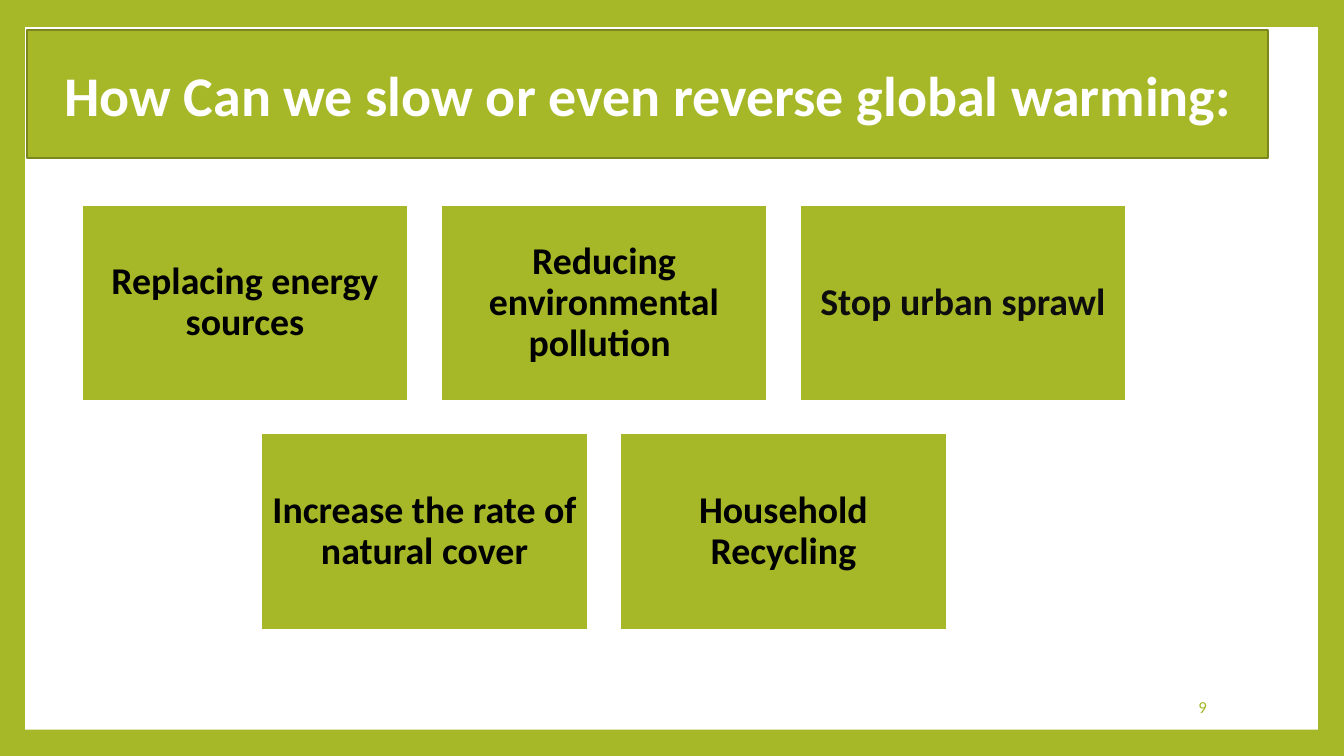
from lxml.etree import SubElement
from pptx import Presentation
from pptx.dml.color import RGBColor
from pptx.enum.shapes import MSO_SHAPE
from pptx.enum.text import MSO_ANCHOR, MSO_AUTO_SIZE, PP_ALIGN
from pptx.oxml.ns import qn
from pptx.util import Inches, Pt

GREEN, DARK_GREEN, WHITE, BLACK = "A6B727", "7B871D", "FFFFFF", "000000"

# Card grid: left and top of the first card, card size, column and row pitch
GRID_LEFT, GRID_TOP = 0.81, 2.03
CARD_W, CARD_H = 3.24, 1.95
COL, ROW = 3.56, 2.27

# Each row: starting column, then the cards with their text colours
CARD_ROWS = [
    (0, [("Replacing energy sources", BLACK),
         ("Reducing environmental pollution ", BLACK),
         ("Stop urban sprawl", "0D0D0D")]),
    (0.5, [("Increase the rate of natural cover", BLACK),
           ("Household Recycling", BLACK)]),
]


def color(hex_code):
    return RGBColor.from_string(hex_code)


def paint(sp, fill, line=None):
    sp.fill.solid()
    sp.fill.fore_color.rgb = color(fill)
    if line:
        sp.line.color.rgb = color(line)
        sp.line.width = Pt(1.5)
    else:
        sp.line.fill.background()


def write(sp, text, size, hex_code, bold=False, align=PP_ALIGN.CENTER):
    tf = sp.text_frame
    tf.word_wrap = True
    tf.auto_size = MSO_AUTO_SIZE.NONE
    tf.vertical_anchor = MSO_ANCHOR.MIDDLE
    p = tf.paragraphs[0]
    p.alignment = align
    r = p.add_run()
    r.text = text
    r.font.name, r.font.size, r.font.bold = "Calibri", Pt(size), bold
    r.font.color.rgb = color(hex_code)
    return p


def add_box(s, left, top, width, height, fill, line=None):
    sp = s.shapes.add_shape(MSO_SHAPE.RECTANGLE, Inches(left), Inches(top),
                            Inches(width), Inches(height))
    sp.shadow.inherit = False
    paint(sp, fill, line)
    return sp


def add_card(s, col, row, text, hex_code):
    sp = add_box(s, GRID_LEFT + col * COL, GRID_TOP + row * ROW,
                 CARD_W, CARD_H, GREEN, WHITE)
    p = write(sp, text, 27, hex_code, bold=True)
    p.line_spacing = 0.9


def format_title(s, text):
    title = s.shapes.title
    title.left, title.top = Inches(0.27), Inches(0.3)
    title.width, title.height = Inches(12.31), Inches(1.27)
    # Rounded banner outline for the placeholder
    geom = SubElement(title.element.spPr, qn("a:prstGeom"), prst="roundRect")
    SubElement(geom, qn("a:avLst"))
    paint(title, GREEN, DARK_GREEN)
    write(title, text, 40, WHITE, bold=True)
    return title


def add_page_number(s, number):
    sp = s.shapes.add_textbox(Inches(10.2), Inches(6.81),
                              Inches(1.87), Inches(0.4))
    write(sp, number, 12, GREEN, align=PP_ALIGN.RIGHT)


def main():
    prs = Presentation()
    prs.slide_width, prs.slide_height = Inches(13.33), Inches(7.5)
    s = prs.slides.add_slide(prs.slide_layouts[5])

    # Green frame around a white panel, with the title banner above it
    s.background.fill.solid()
    s.background.fill.fore_color.rgb = color(GREEN)
    panel = add_box(s, 0.25, 0.27, 12.82, 6.97, WHITE)
    title = format_title(s, "How Can we slow or even reverse global warming:")
    title.element.addprevious(panel.element)

    # Cards
    for row, (start, cards) in enumerate(CARD_ROWS):
        for i, (text, hex_code) in enumerate(cards):
            add_card(s, start + i, row, text, hex_code)

    add_page_number(s, "9")
    prs.save("out.pptx")


if __name__ == "__main__":
    main()
